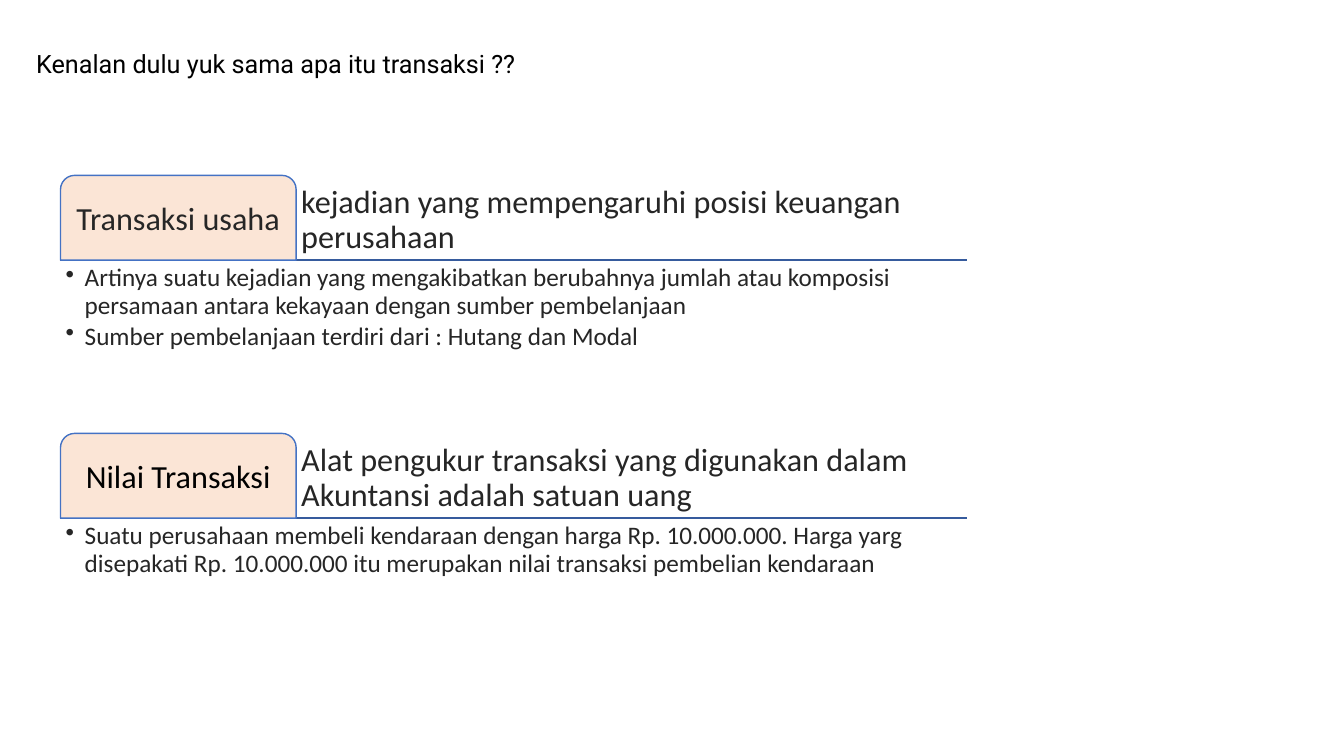
"""Build a slide that introduces business transactions and their value."""
from lxml import etree
from pptx import Presentation
from pptx.dml.color import RGBColor
from pptx.enum.shapes import MSO_CONNECTOR, MSO_SHAPE
from pptx.enum.text import MSO_ANCHOR, MSO_AUTO_SIZE, PP_ALIGN
from pptx.oxml.ns import qn
from pptx.util import Inches, Pt

TOP, MIDDLE, BOTTOM = MSO_ANCHOR.TOP, MSO_ANCHOR.MIDDLE, MSO_ANCHOR.BOTTOM
LEFT, CENTER = PP_ALIGN.LEFT, PP_ALIGN.CENTER
TAB, STRAIGHT = MSO_SHAPE.ROUND_2_SAME_RECTANGLE, MSO_CONNECTOR.STRAIGHT
FIT = MSO_AUTO_SIZE.SHAPE_TO_FIT_TEXT

TITLE = "Kenalan dulu yuk sama apa itu transaksi ??"
SECTIONS = [
    ("Transaksi usaha", "dark",
     "kejadian yang mempengaruhi posisi keuangan perusahaan",
     ["Artinya suatu kejadian yang mengakibatkan berubahnya jumlah atau komposisi "
      "persamaan antara kekayaan dengan sumber pembelanjaan",
      "Sumber pembelanjaan terdiri dari : Hutang dan Modal"]),
    ("Nilai Transaksi", "black",
     "Alat pengukur transaksi yang digunakan dalam Akuntansi adalah satuan uang",
     ["Suatu perusahaan membeli kendaraan dengan harga Rp. 10.000.000. Harga yarg "
      "disepakati Rp. 10.000.000 itu merupakan nilai transaksi pembelian kendaraan"]),
]
COLORS = {"dark": "262626", "black": "000000", "tab": "FBE5D6",
          "edge": "4472C4", "rule": "365B9D"}

SLIDE_W, SLIDE_H = 13.33, 7.5
GRID_X, GRID_Y, GRID_W = 0.6, 1.74, 8.99
TAB_W = GRID_W * 0.26
HEAD_H, BODY_H, PITCH = 0.84, 1.68, 2.56
INSET, INDENT = 0.05, 0.19


def rgb(name):
    return RGBColor.from_string(COLORS[name])


def write(sp, lines, size, color="dark", anchor=TOP, align=LEFT, bullet=False):
    tf = sp.text_frame
    tf.word_wrap = True
    tf.vertical_anchor = anchor
    tf.margin_left = tf.margin_right = tf.margin_top = tf.margin_bottom = Inches(INSET)
    tf.text = "\n".join(lines)
    for p in tf.paragraphs:
        p.alignment = align
        p.line_spacing = 0.9
        if bullet:
            p.space_after = Pt(size * 0.15)
            pPr = p._p.get_or_add_pPr()
            pPr.set("marL", str(Inches(INDENT)))
            pPr.set("indent", str(-Inches(INDENT)))
            etree.SubElement(pPr, qn("a:buChar")).set("char", "•")
        style(p, size, "Calibri", color)


def style(p, size, name, color):
    for r in p.runs:
        r.font.size = Pt(size)
        r.font.name = name
        r.font.color.rgb = rgb(color)


def add_box(shapes, x, y, w, h):
    return shapes.add_textbox(Inches(x), Inches(y), Inches(w), Inches(h))


def add_rule(shapes, y):
    line = shapes.add_connector(STRAIGHT, Inches(GRID_X), Inches(y),
                                Inches(GRID_X + GRID_W), Inches(y))
    line.line.color.rgb = rgb("rule")
    line.line.width = Pt(1)
    etree.SubElement(line._element.spPr, qn("a:effectLst"))


def add_tab(shapes, y, label, color):
    sp = shapes.add_shape(TAB, Inches(GRID_X), Inches(y), Inches(TAB_W), Inches(HEAD_H))
    sp.adjustments[0] = 0.167
    sp.shadow.inherit = False
    sp.fill.solid()
    sp.fill.fore_color.rgb = rgb("tab")
    sp.line.color.rgb = rgb("edge")
    sp.line.width = Pt(1)
    write(sp, [label], 23, color, MIDDLE, CENTER)


def add_section(shapes, y, label, color, heading, points):
    base = y + HEAD_H
    add_rule(shapes, base)
    head = add_box(shapes, GRID_X + TAB_W, y, GRID_W - TAB_W, HEAD_H)
    write(head, [heading], 23, anchor=BOTTOM)
    add_tab(shapes, y, label, color)
    write(add_box(shapes, GRID_X, base, GRID_W, BODY_H), points, 18, bullet=True)


def main():
    prs = Presentation()
    prs.slide_width, prs.slide_height = Inches(SLIDE_W), Inches(SLIDE_H)
    shapes = prs.slides.add_slide(prs.slide_layouts[6]).shapes
    for i, section in enumerate(SECTIONS):
        add_section(shapes, GRID_Y + i * PITCH, *section)
    tf = add_box(shapes, 0.26, 0.43, 6.55, 0.4).text_frame
    tf.word_wrap = True
    tf.auto_size = FIT
    tf.text = TITLE
    style(tf.paragraphs[0], 18, "Roboto", "black")
    prs.save("out.pptx")


if __name__ == "__main__":
    main()
